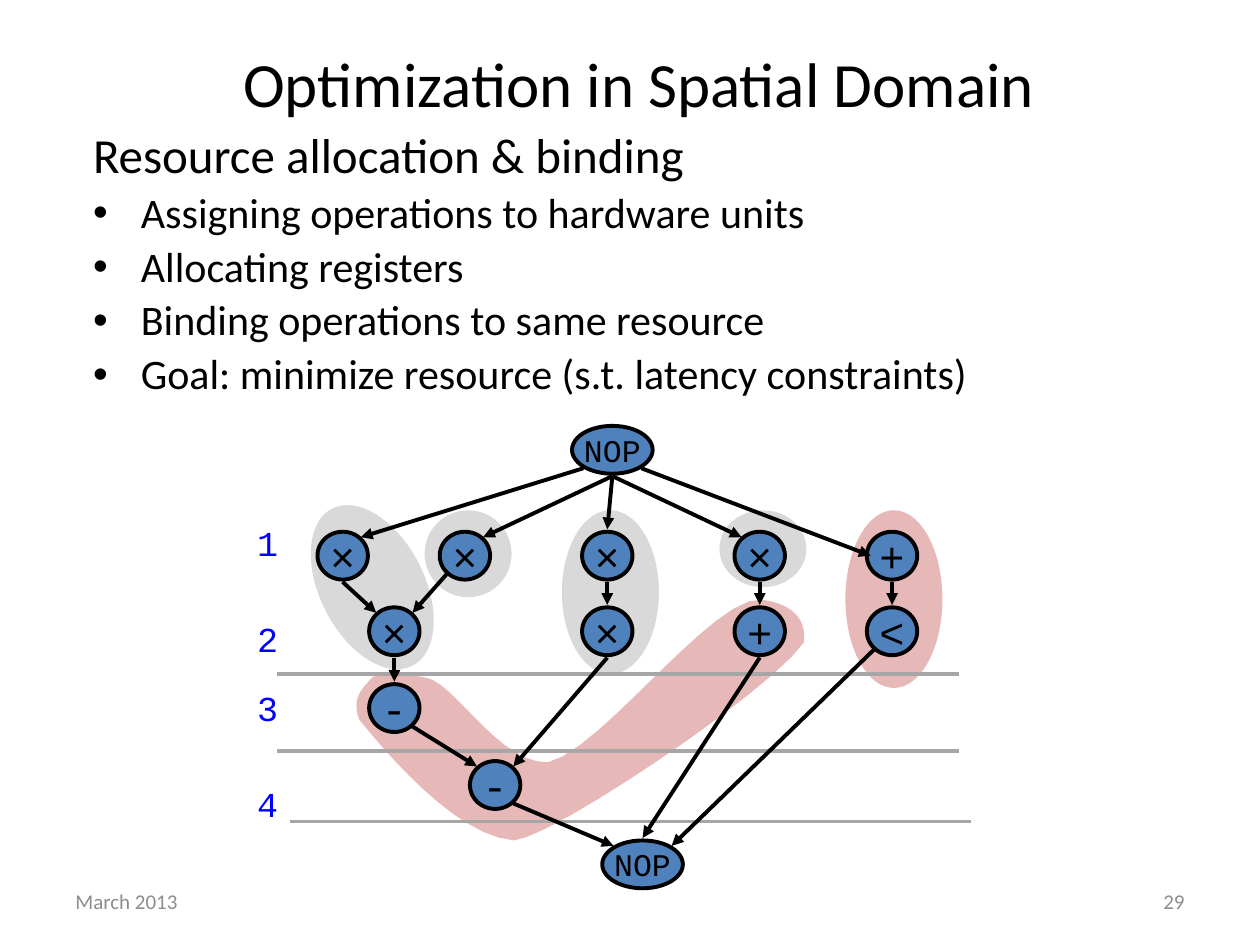
from lxml import etree
from pptx import Presentation
from pptx import util as u
from pptx.dml.color import RGBColor
from pptx.enum import shapes, text
from pptx.oxml.ns import qn

Inches = u.Inches
BLACK, GRAY, PINK, BLUE = "000000", "D9D9D9", "E6B9B8", "4F81BD"
NODE_HEIGHT = 0.38
ROWS = [4.41, 5.01, 5.62, 6.23]

# name: (symbol, centre x, centre y, width)
NODES = {
    "source": ("NOP", 4.86, 3.57, 0.64),
    "mul1": ("×", 2.72, ROWS[0], 0.4),
    "mul2": ("×", 3.69, ROWS[0], 0.4),
    "mul3": ("×", 4.82, ROWS[0], 0.4),
    "mul4": ("×", 6.03, ROWS[0], 0.4),
    "add1": ("+", 7.08, ROWS[0], 0.4),
    "mul5": ("×", 3.13, ROWS[1], 0.4),
    "mul6": ("×", 4.82, ROWS[1], 0.4),
    "add2": ("+", 6.03, ROWS[1], 0.4),
    "less": ("<", 7.08, ROWS[1], 0.4),
    "sub1": ("-", 3.13, ROWS[2], 0.4),
    "sub2": ("-", 3.93, ROWS[3], 0.4),
    "sink": ("NOP", 5.1, 6.86, 0.64),
}
# Points around a node, in half widths and half heights from its centre
ANCHORS = {
    "top": (0, -1.1), "bottom": (0, 1.1), "left": (-0.85, 0),
    "top left": (-0.72, -0.77), "top right": (0.72, -0.77),
    "bottom left": (-0.72, 0.77), "bottom right": (0.72, 0.77),
}
EDGES = [
    ("source", "bottom left", "mul1", "top right"),
    ("source", "bottom", "mul2", "top right"),
    ("source", "bottom", "mul3", "top"),
    ("source", "bottom", "mul4", "top left"),
    ("source", "bottom right", "add1", "left"),
    ("add1", "bottom", "less", "top"),
    ("mul4", "bottom", "add2", "top"),
    ("mul3", "bottom", "mul6", "top"),
    ("mul2", "bottom left", "mul5", "top right"),
    ("mul1", "bottom", "mul5", "top left"),
    ("mul5", "bottom", "sub1", "top"),
    ("mul6", "bottom", "sub2", "top right"),
    ("sub1", "bottom right", "sub2", "top left"),
    ("add2", "bottom", "sink", "top"),
    ("less", "bottom left", "sink", "top right"),
    ("sub2", "bottom right", "sink", "top left"),
]
# left, top, width, height, rotation, colour
BINDINGS = [
    (5.71, 4.05, 0.69, 0.61, 0, GRAY),
    (3.37, 4.05, 0.69, 0.69, 0, GRAY),
    (2.54, 3.96, 0.83, 1.4, 332.9, GRAY),
    (4.46, 4.05, 0.77, 1.3, 0, GRAY),
    (6.71, 4.05, 0.77, 1.41, 0, PINK),
]
BAND_START = (6.05, 4.76)
BAND_CURVES = [
    ((6.34, 4.8), (6.4, 4.96), (6.38, 5.1)),
    ((6.1, 5.5), (4.36, 6.66), (4.08, 6.67)),
    ((3.61, 6.64), (3.03, 5.93), (2.85, 5.71)),
    ((2.79, 5.54), (2.87, 5.47), (2.96, 5.37)),
    ((3.09, 5.35), (3.34, 5.35), (3.44, 5.4)),
    ((3.67, 5.52), (3.99, 6.06), (4.35, 6.05)),
    ((4.78, 5.95), (5.67, 4.71), BAND_START),
]


def color(value):
    return RGBColor.from_string(value)


def style_text(paragraph, size, value, font="Calibri", align=None):
    paragraph.alignment = align
    for run in paragraph.runs:
        run.font.name = font
        run.font.size = u.Pt(size)
        run.font.color.rgb = color(value)


def add_text(container, box, content, size, value=BLACK, font="Calibri", align=None,
             anchor=text.MSO_ANCHOR.MIDDLE, margin=None):
    frame = container.add_textbox(*map(Inches, box)).text_frame
    frame.word_wrap = True
    frame.vertical_anchor = anchor
    if margin is not None:
        frame.margin_left = frame.margin_right = Inches(margin)
        frame.margin_top = frame.margin_bottom = Inches(margin)
    frame.text = content
    style_text(frame.paragraphs[0], size, value, font, align)
    return frame


def add_bullet(frame, content):
    paragraph = frame.add_paragraph()
    paragraph.text = content
    paragraph.line_spacing = 0.9
    paragraph.space_before = u.Pt(4.8)
    properties = paragraph._p.get_or_add_pPr()
    properties.set("marL", str(Inches(0.38)))
    properties.set("indent", str(-Inches(0.38)))
    etree.SubElement(properties, qn("a:buFont"), typeface="Arial")
    etree.SubElement(properties, qn("a:buChar"), char="•")
    style_text(paragraph, 24, BLACK)


def fill_plain(shape, value):
    shape.shadow.inherit = False
    shape.fill.solid()
    shape.fill.fore_color.rgb = color(value)
    shape.line.fill.background()


def add_ellipse(container, box, value):
    ellipse = container.add_shape(shapes.MSO_SHAPE.OVAL, *map(Inches, box))
    fill_plain(ellipse, value)
    return ellipse


def add_node(container, symbol, x, y, width):
    box = (x - width / 2, y - NODE_HEIGHT / 2, width, NODE_HEIGHT)
    node = add_ellipse(container, box, BLUE)
    node.line.color.rgb = color(BLACK)
    node.line.width = u.Pt(2.25)
    frame = node.text_frame
    frame.word_wrap = False
    frame.vertical_anchor = text.MSO_ANCHOR.MIDDLE
    frame.text = symbol
    style_text(frame.paragraphs[0], 24 if len(symbol) == 1 else 18, BLACK,
               "Courier New", text.PP_ALIGN.CENTER)


def add_line(container, start, end, value, arrow=False):
    line = container.add_connector(shapes.MSO_CONNECTOR.STRAIGHT,
                                   *map(Inches, (*start, *end)))
    line.line.color.rgb = color(value)
    line.line.width = u.Pt(2.25)
    if arrow:
        etree.SubElement(line.line._get_or_add_ln(), qn("a:tailEnd"), type="triangle")
    etree.SubElement(line._element.spPr, qn("a:effectLst"))


def anchor_point(name, side):
    _, x, y, width = NODES[name]
    across, down = ANCHORS[side]
    return x + across * width / 2, y + down * NODE_HEIGHT / 2


def curve_points(start, curves, steps=12):
    """Points along a chain of cubic Bézier curves, as lengths."""
    points = []
    for first, second, end in curves:
        for step in range(1, steps + 1):
            t = step / steps
            weights = ((1 - t) ** 3, 3 * t * (1 - t) ** 2, 3 * t * t * (1 - t), t ** 3)
            corners = (start, first, second, end)
            points.append(tuple(
                Inches(sum(w * corner[axis] for w, corner in zip(weights, corners)))
                for axis in (0, 1)))
        start = end
    return points


def add_band(container):
    builder = container.build_freeform(*map(Inches, BAND_START))
    builder.add_line_segments(curve_points(BAND_START, BAND_CURVES), close=True)
    fill_plain(builder.convert_to_shape(), PINK)


def add_graph(container):
    add_band(container)
    for *box, rotation, value in BINDINGS:
        add_ellipse(container, box, value).rotation = rotation
    for left, y in ((2.2, 5.35), (2.2, 5.96), (2.3, 6.52)):
        add_line(container, (left + 5.41, y), (left, y), "A6A6A6")
    for node in NODES.values():
        add_node(container, *node)
    for step, top in enumerate((4.14, 4.9, 5.45, 6.21), start=1):
        add_text(container, (2.04, top, 0.2, 0.34), str(step), 20, "0000FF",
                 "Courier New", anchor=text.MSO_ANCHOR.TOP, margin=0)
    for source, source_side, target, target_side in EDGES:
        add_line(container, anchor_point(source, source_side),
                 anchor_point(target, target_side), BLACK, arrow=True)


def main():
    presentation = Presentation()
    presentation.slide_width, presentation.slide_height = Inches(10), Inches(7.5)
    slide = presentation.slides.add_slide(presentation.slide_layouts[6])
    add_text(slide.shapes, (0.57, 0.21, 9, 0.89), "Optimization in Spatial Domain", 36,
             align=text.PP_ALIGN.CENTER)
    body = add_text(slide.shapes, (0.64, 0.99, 8.84, 2.23), "Resource allocation & binding",
                    28, anchor=text.MSO_ANCHOR.TOP)
    body.paragraphs[0].line_spacing = 0.9
    for item in ("Assigning operations to hardware units", "Allocating registers",
                 "Binding operations to same resource",
                 "Goal: minimize resource (s.t. latency constraints)"):
        add_bullet(body, item)
    add_graph(slide.shapes.add_group_shape().shapes)
    add_text(slide.shapes, (0.5, 6.95, 2.33, 0.4), "March 2013", 12, "8C8C8C")
    add_text(slide.shapes, (7.17, 6.95, 2.33, 0.4), "29", 12, "8C8C8C",
             align=text.PP_ALIGN.RIGHT)
    presentation.save("out.pptx")


if __name__ == "__main__":
    main()
